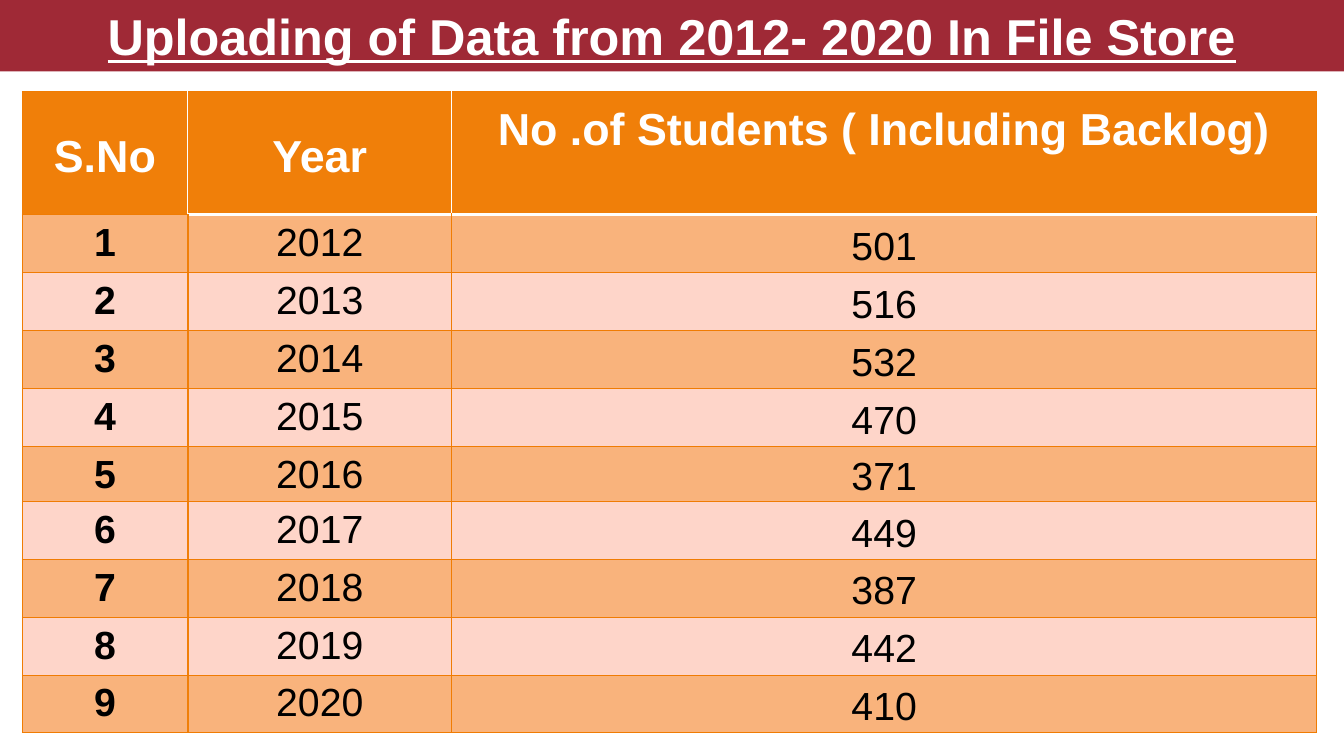
from lxml import etree
from pptx import Presentation
from pptx.dml.color import RGBColor
from pptx.enum import text
from pptx.oxml.ns import qn
from pptx.util import Cm, Pt

# Content
TITLE = "Uploading of Data from 2012- 2020 In File Store"
HEADINGS = ["S.No", "Year", "No .of Students ( Including Backlog)"]
FIRST_YEAR = 2012
STUDENTS = [501, 516, 532, 470, 371, 449, 387, 442, 410]

# Look
FONT = "Arial"
COLORS = {
    "title": "9F2936", "header": "F07F09", "grid": "F07C03", "dark_band": "F9B37C",
    "light_band": "FED5C9", "white": "FFFFFF", "black": "000000",
}
COLUMN_WIDTHS = [4.17, 6.65, 21.79]
HEADER_HEIGHT, ROW_HEIGHT, SHORT_ROW_HEIGHT = 3.1, 1.46, 1.38
SHORT_ROW = 5
THIN, THICK = 0.75, 2


def color(name):
    return RGBColor.from_string(COLORS[name])


def format_paragraph(paragraph, size, color_name, bold):
    paragraph.alignment = text.PP_ALIGN.CENTER
    font = paragraph.runs[0].font
    font.name, font.size, font.bold = FONT, Pt(size), bold
    font.color.rgb = color(color_name)


def set_borders(cell, borders):
    """Give the cell its (colour, width) lines, ahead of its fill."""
    properties = cell._tc.get_or_add_tcPr()
    sides = [side for side in "LRTB" if side in borders]
    for index, side in enumerate(sides):
        color_name, width = borders[side]
        line = etree.Element(qn(f"a:ln{side}"), w=str(Pt(width)))
        fill = etree.SubElement(line, qn("a:solidFill"))
        etree.SubElement(fill, qn("a:srgbClr"), val=COLORS[color_name])
        properties.insert(index, line)


def cell_borders(row, column):
    grid, divider = ("grid", THIN), ("header", THICK)
    rule = ("white", THICK) if column else grid
    if row == 0:
        borders = {"T": grid, "B": rule}
        if column == 0:
            borders["L"] = grid
        if column == len(HEADINGS) - 1:
            borders["R"] = grid
        return borders
    return {
        "L": divider if column == 1 else grid,
        "R": divider if column == 0 else grid,
        "T": rule if row == 1 else grid,
        "B": grid,
    }


presentation = Presentation()
presentation.slide_width, presentation.slide_height = Cm(33.86), Cm(19.05)
slide = presentation.slides.add_slide(presentation.slide_layouts[5])

# Title band
title = slide.shapes.title
title.left, title.top, title.width, title.height = 0, 0, presentation.slide_width, Cm(1.8)
title.fill.solid()
title.fill.fore_color.rgb = color("title")
title.text_frame.text = TITLE
title.text_frame.auto_size = text.MSO_AUTO_SIZE.NONE
title.text_frame.vertical_anchor = text.MSO_ANCHOR.MIDDLE
format_paragraph(title.text_frame.paragraphs[0], 36, "white", True)
title.text_frame.paragraphs[0].runs[0].font.underline = True

# Table grid
rows = [HEADINGS] + [
    [number, FIRST_YEAR + number - 1, count] for number, count in enumerate(STUDENTS, 1)
]
heights = [HEADER_HEIGHT] + [ROW_HEIGHT] * len(STUDENTS)
heights[SHORT_ROW] = SHORT_ROW_HEIGHT
table = slide.shapes.add_table(
    len(rows), len(HEADINGS), Cm(0.56), Cm(2.31), Cm(sum(COLUMN_WIDTHS)), Cm(sum(heights))
).table
for column, width in zip(table.columns, COLUMN_WIDTHS):
    column.width = Cm(width)
for row, height in zip(table.rows, heights):
    row.height = Cm(height)

# Table cells
for row, values in enumerate(rows):
    is_header = row == 0
    fill_name = "header" if is_header else "dark_band" if row % 2 else "light_band"
    for column, value in enumerate(values):
        is_count = column == len(HEADINGS) - 1
        cell = table.cell(row, column)
        cell.margin_left = cell.margin_right = Cm(0.18)
        cell.margin_top = cell.margin_bottom = 0
        cell.vertical_anchor = (
            text.MSO_ANCHOR.MIDDLE if is_header or is_count else text.MSO_ANCHOR.TOP
        )
        if is_header and is_count:
            cell.vertical_anchor = text.MSO_ANCHOR.BOTTOM
            cell.margin_bottom = Cm(1.49)
        cell.fill.solid()
        cell.fill.fore_color.rgb = color(fill_name)
        cell.text_frame.text = str(value)
        paragraph = cell.text_frame.paragraphs[0]
        paragraph.line_spacing = 1.15
        format_paragraph(
            paragraph, 32 if is_header else 28,
            "white" if is_header else "black", is_header or column == 0,
        )
        set_borders(cell, cell_borders(row, column))

presentation.save("out.pptx")
